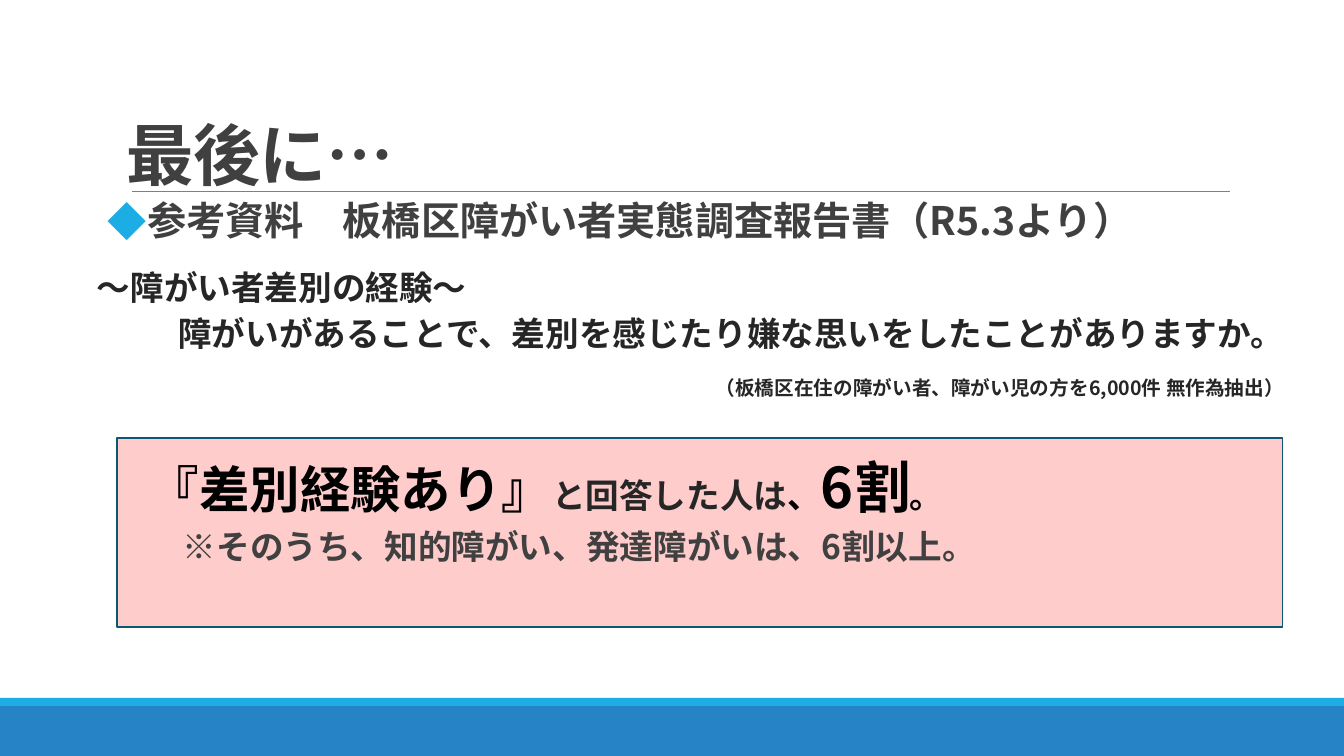
import pptx
import pptx.util
import pptx.dml.color
import pptx.enum.shapes
import pptx.enum.text
import pptx.oxml
import pptx.oxml.ns
import lxml.etree

FONT = "Noto Sans CJK JP"
GREY, DARK, BLACK = "404040", "262626", "000000"
PX = 914400 / 100.8

BANDS = [((0, 706, 1344, 50), "2683C6"), ((0, 698, 1344, 8), "1CADE4")]
RULE = (132, 191, 1230, 191)
TITLE_AREA = (117, 86, 1109, 113)
TITLE = [dict(spans=[("最後に…", 48, GREY)], spacing=0.85)]

SOURCE_AREA = (108, 199, 1183, 326)
SOURCE = [dict(spans=[("参考資料　板橋区障がい者実態調査報告書（R5.3より）", 28, GREY)],
               spacing=28, indent=10, bullet="◆")]

QUESTION_AREA = (65, 264, 1219, 157)
QUESTION = [
    dict(spans=[("～障がい者差別の経験～", 24, DARK)], indent=32),
    dict(spans=[("障がいがあることで、差別を感じたり嫌な思いをしたことがありますか。", 24, DARK)],
         indent=32, align="RIGHT"),
    dict(spans=[("（板橋区在住の障がい者、障がい児の方を6,000件 無作為抽出）", 14, DARK)],
         indent=32, align="RIGHT"),
]

ANSWER_AREA = (117, 438, 1166, 189)
ANSWER = [
    dict(spans=[("『差別経験あり』", 36, BLACK), ("と回答した人は", 24, DARK),
                ("、", 24, BLACK), ("6割", 40, BLACK), ("。", 24, BLACK)], indent=32),
    dict(spans=[("※そのうち、知的障がい、発達障がいは、6割以上。", 24, GREY)], indent=66),
]


def px(*lengths):
    return [pptx.util.Emu(round(length * PX)) for length in lengths]


def color(value):
    return pptx.dml.color.RGBColor.from_string(value)


def add_child(parent, tag, **attributes):
    return lxml.etree.SubElement(parent, pptx.oxml.ns.qn(tag), attributes)


def style_font(font, size, fill):
    font.name, font.size, font.bold = FONT, pptx.util.Pt(size), True
    font.color.rgb = color(fill)


def write(frame, lines, anchor, side=0):
    frame.word_wrap = True
    frame.auto_size = pptx.enum.text.MSO_AUTO_SIZE.NONE
    frame.vertical_anchor = anchor
    frame.margin_left, frame.margin_right = px(side, side)
    frame.margin_top, frame.margin_bottom = px(5, 5)
    for number, line in enumerate(lines):
        para = frame.paragraphs[0] if number == 0 else frame.add_paragraph()
        para.alignment = pptx.enum.text.PP_ALIGN[line.get("align", "LEFT")]
        spacing = line.get("spacing", 15)
        if spacing < 1:
            para.line_spacing = spacing
        else:
            para.line_spacing = pptx.util.Pt(spacing)
            para.space_before, para.space_after = pptx.util.Pt(12), pptx.util.Pt(6)
        indent = px(line.get("indent", 0))[0]
        properties = para._p.get_or_add_pPr()
        properties.set("marL", str(indent))
        properties.set("indent", str(-indent if "bullet" in line else 0))
        if "bullet" in line:
            add_child(add_child(properties, "a:buClr"), "a:srgbClr", val="1CADE4")
            add_child(properties, "a:buFont", typeface=FONT)
            add_child(properties, "a:buChar", char=line["bullet"])
        for text, size, fill in line["spans"]:
            span = para.add_run()
            span.text = text
            font = para.font if len(line["spans"]) == 1 else span.font
            style_font(font, size, fill)
        for tag in ("a:defRPr", "a:rPr"):
            for font_properties in para._p.iter(pptx.oxml.ns.qn(tag)):
                add_child(font_properties, "a:ea", typeface=FONT)


def add_panel(page, area, fill, outline=None):
    box = page.shapes.add_shape(pptx.enum.shapes.MSO_SHAPE.RECTANGLE, *px(*area))
    box.shadow.inherit = False
    box.fill.solid()
    box.fill.fore_color.rgb = color(fill)
    if outline:
        box.line.color.rgb = color(outline)
        box.line.width = pptx.util.Pt(0.75)
    else:
        box.line.fill.background()
    return box


def main():
    deck = pptx.Presentation()
    deck.slide_width, deck.slide_height = px(1344, 756)
    page = deck.slides.add_slide(deck.slide_layouts[5])
    anchors = pptx.enum.text.MSO_ANCHOR

    for area, fill in BANDS:
        add_panel(page, area, fill)
    rule = page.shapes.add_connector(pptx.enum.shapes.MSO_CONNECTOR.STRAIGHT, *px(*RULE))
    rule.line.color.rgb = color("808080")
    rule.line.width = pptx.util.Pt(0.5)
    add_child(rule._element.spPr, "a:effectLst")

    title = page.shapes.title
    title.left, title.top, title.width, title.height = px(*TITLE_AREA)
    write(title.text_frame, TITLE, anchors.BOTTOM, side=10)
    title.text_frame.paragraphs[0].font._element.set("spc", "-50")

    source = page.shapes.add_textbox(*px(*SOURCE_AREA))
    write(source.text_frame, SOURCE, anchors.TOP)
    question = add_panel(page, QUESTION_AREA, "FFFFFF")
    write(question.text_frame, QUESTION, anchors.MIDDLE)
    answer = add_panel(page, ANSWER_AREA, "FFCCCC", "0E5772")
    write(answer.text_frame, ANSWER, anchors.MIDDLE)

    deck.save("out.pptx")


if __name__ == "__main__":
    main()
